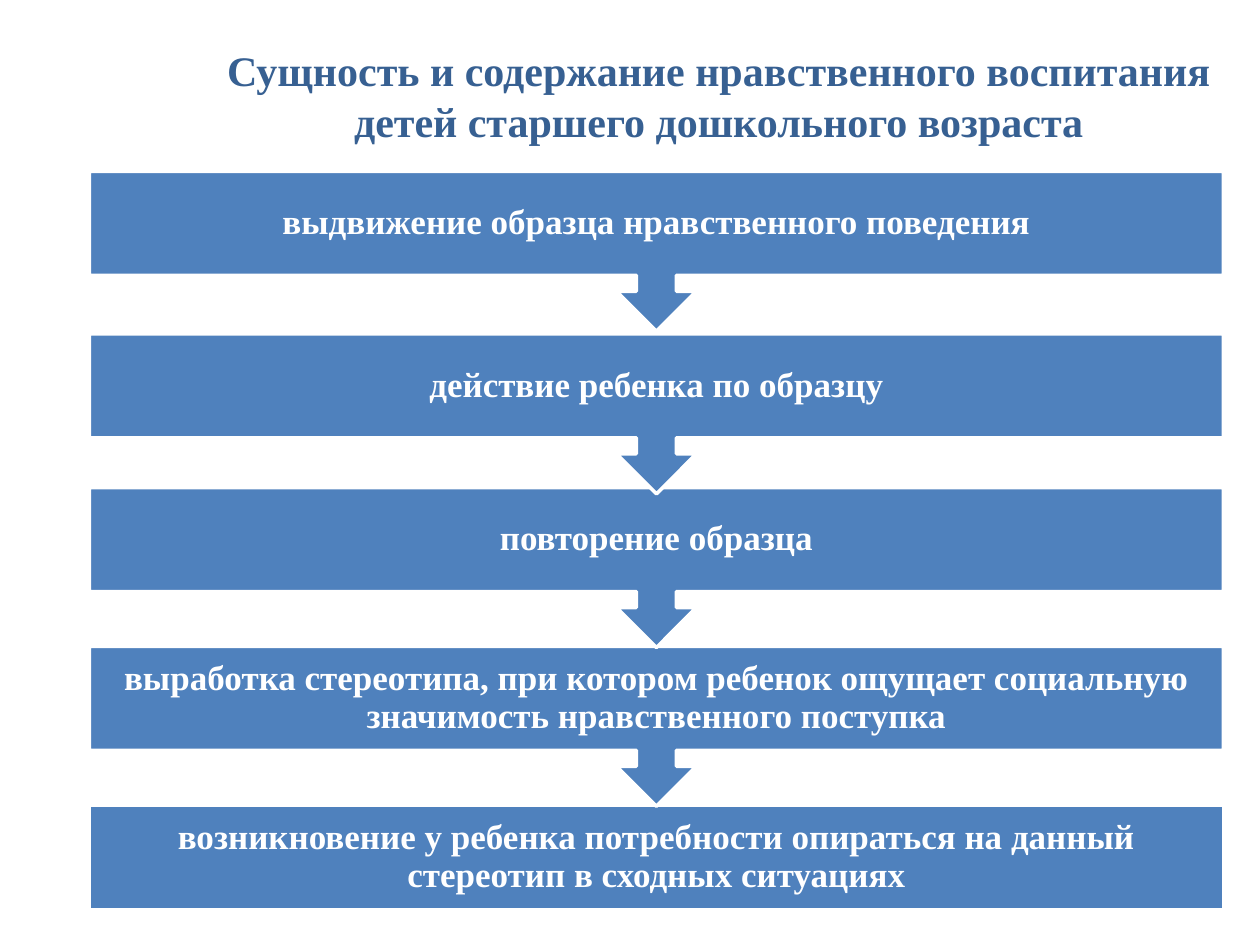
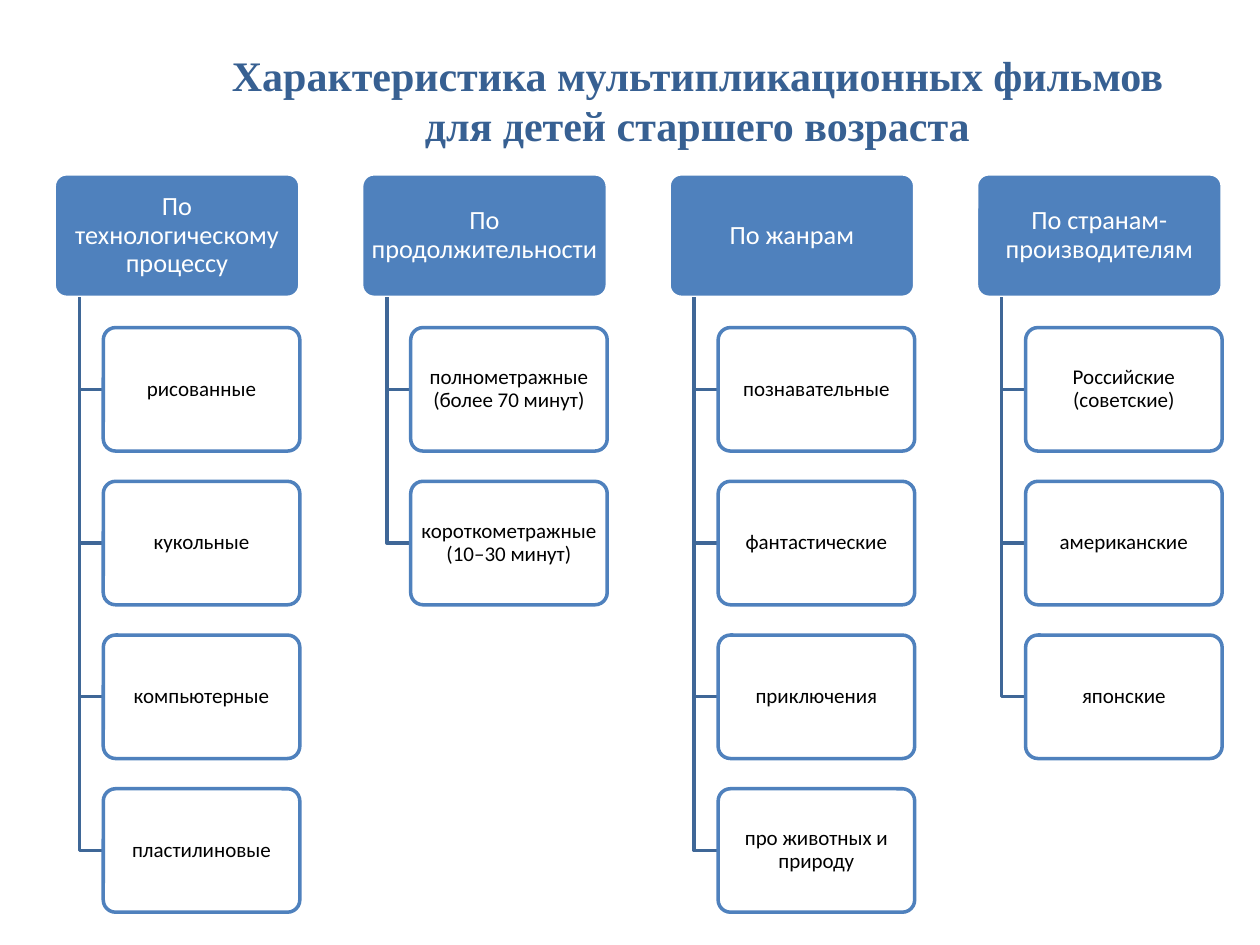
from pptx import Presentation
from pptx.dml.color import RGBColor
from pptx.enum.shapes import MSO_SHAPE as Shape
from pptx.enum.text import MSO_ANCHOR as Anchor, PP_ALIGN as Align
from pptx.oxml.ns import qn
from pptx.util import Inches, Pt
from lxml import etree

COLORS = {"blue": "4F81BD", "title": "376092", "branch": "3F6797",
          "white": "FFFFFF", "black": "000000"}
SERIF, SANS = "Times New Roman", "Calibri"


def write(shape, text, size, font, color, bold=False, spacing=0.9, insets=(0.1, 0.05)):
    """Put one centred paragraph into a shape or text box."""
    frame = shape.text_frame
    frame.word_wrap = True
    frame.vertical_anchor = Anchor.MIDDLE
    frame.margin_left = frame.margin_right = Inches(insets[0])
    frame.margin_top = frame.margin_bottom = Inches(insets[1])
    paragraph = frame.paragraphs[0]
    paragraph.text = text
    paragraph.alignment = Align.CENTER
    paragraph.line_spacing = spacing
    paragraph.font.size = Pt(size)
    paragraph.font.name = font
    paragraph.font.bold = bold
    paragraph.font.color.rgb = RGBColor.from_string(COLORS[color])


def add_box(slide, kind, box, fill, line):
    """Add a preset shape with a flat fill and a 2 pt outline."""
    shape = slide.shapes.add_shape(kind, *map(Inches, box))
    shape.shadow.inherit = False
    shape.fill.solid()
    shape.fill.fore_color.rgb = RGBColor.from_string(COLORS[fill])
    shape.line.color.rgb = RGBColor.from_string(COLORS[line])
    shape.line.width = Pt(2)
    return shape


presentation = Presentation()
presentation.slide_width, presentation.slide_height = Inches(10), Inches(7.5)

# Slides and titles
titles = [
    ("Сущность и содержание нравственного воспитания детей старшего дошкольного возраста",
     (1.69, 0.13, 8.03, 1.25)),
    ("Характеристика мультипликационных фильмов для детей старшего возраста",
     (1.61, 0.25, 7.85, 1.08)),
]
slides = []
for title, box in titles:
    slide = presentation.slides.add_slide(presentation.slide_layouts[6])
    title_box = slide.shapes.add_textbox(*map(Inches, box))
    write(title_box, title, 24, SERIF, "title", bold=True, spacing=1.0)
    slides.append(slide)
process_slide, films_slide = slides

# Slide 1: chain of steps, drawn bottom up so each arrow overlaps the next step
steps = [
    (1.36, "выдвижение образца нравственного поведения"),
    (2.65, "действие ребенка по образцу"),
    (3.87, "повторение образца"),
    (5.13, "выработка стереотипа, при котором ребенок ощущает социальную "
           "значимость нравственного поступка"),
    (6.39, "возникновение у ребенка потребности опираться на данный "
           "стереотип в сходных ситуациях"),
]
for top, text in reversed(steps):
    is_last = text == steps[-1][1]
    kind = Shape.RECTANGLE if is_last else Shape.DOWN_ARROW_CALLOUT
    height = 0.83 if is_last else 1.27
    step = add_box(process_slide, kind, (0.71, top, 9, height), "blue", "white")
    write(step, text, 20, SERIF, "white", bold=True, insets=(0.16, 0.16))

# Slide 2: four classifications with their branches
classifications = {
    "По технологическому процессу":
        ["рисованные", "кукольные", "компьютерные", "пластилиновые"],
    "По продолжительности":
        ["полнометражные (более 70 минут)", "короткометражные (10–30 минут)"],
    "По жанрам":
        ["познавательные", "фантастические", "приключения", "про животных и природу"],
    "По странам-производителям":
        ["Российские (советские)", "американские", "японские"],
}
LEFT, TOP, COLUMN_STEP, ROW_STEP = 0.43, 1.38, 2.44, 1.22
HEADER_WIDTH, ITEM_WIDTH, BOX_HEIGHT = 1.95, 1.56, 0.98
TRUNK_INDENT, ITEM_INDENT = 0.2, 0.39
INSETS = (0.03, 0.02)

for column, (heading, items) in enumerate(classifications.items()):
    left = LEFT + column * COLUMN_STEP
    header = add_box(films_slide, Shape.ROUNDED_RECTANGLE,
                     (left, TOP, HEADER_WIDTH, BOX_HEIGHT), "blue", "white")
    header.adjustments[0] = 0.1
    write(header, heading, 15, SANS, "white", insets=INSETS)

    trunk, item_left = left + TRUNK_INDENT, left + ITEM_INDENT
    for row, item in enumerate(items, start=1):
        top = TOP + row * ROW_STEP
        middle = top + BOX_HEIGHT / 2

        # Elbow from the heading to the item
        builder = films_slide.shapes.build_freeform(Inches(trunk), Inches(TOP + BOX_HEIGHT))
        builder.add_line_segments([(Inches(trunk), Inches(middle)),
                                   (Inches(item_left), Inches(middle))], close=False)
        branch = builder.convert_to_shape()
        branch.shadow.inherit = False
        branch.fill.background()
        branch.line.color.rgb = RGBColor.from_string(COLORS["branch"])
        branch.line.width = Pt(2)

        # Item box with a 90 % opaque fill
        item_box = add_box(films_slide, Shape.ROUNDED_RECTANGLE,
                           (item_left, top, ITEM_WIDTH, BOX_HEIGHT), "white", "blue")
        item_box.adjustments[0] = 0.1
        fill_color = item_box.element.spPr.find(qn("a:solidFill")).find(qn("a:srgbClr"))
        etree.SubElement(fill_color, qn("a:alpha")).set("val", "90000")
        write(item_box, item, 12, SANS, "black", insets=INSETS)

presentation.save("out.pptx")
